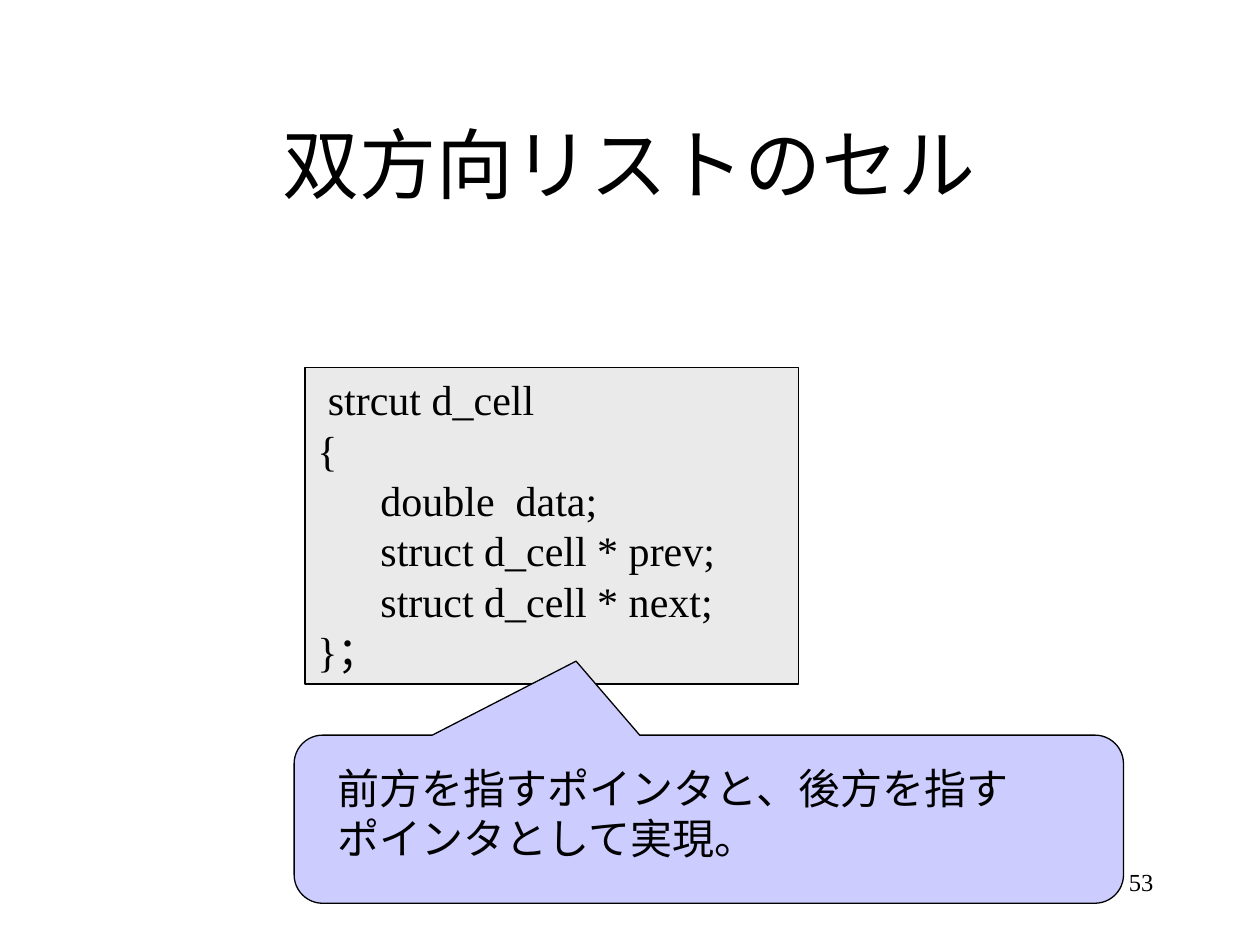
from pptx import Presentation
from pptx.dml.color import RGBColor
from pptx.enum.shapes import MSO_SHAPE
from pptx.enum.text import MSO_ANCHOR, PP_ALIGN
from pptx.util import Cm, Pt

COLORS = {"ink": "000000", "code": "EAEAEA", "callout": "CCCCFF"}
FONT = "Times New Roman"


def write(shape, lines, size, align=PP_ALIGN.LEFT, anchor=MSO_ANCHOR.TOP, wrap=True):
    frame = shape.text_frame
    frame.word_wrap = wrap
    frame.vertical_anchor = anchor
    for i, line in enumerate(lines):
        paragraph = frame.add_paragraph() if i else frame.paragraphs[0]
        paragraph.alignment = align
        run = paragraph.add_run()
        run.text = line
        run.font.size = Pt(size)
        run.font.name = FONT
        run.font.color.rgb = RGBColor.from_string(COLORS["ink"])


def add_panel(kind, left, top, width, height, fill):
    panel = slide.shapes.add_shape(kind, Cm(left), Cm(top), Cm(width), Cm(height))
    panel.shadow.inherit = False
    panel.fill.solid()
    panel.fill.fore_color.rgb = RGBColor.from_string(COLORS[fill])
    panel.line.color.rgb = RGBColor.from_string(COLORS["ink"])
    panel.line.width = Pt(0.75)
    return panel


prs = Presentation()
prs.slide_width, prs.slide_height = Cm(25.4), Cm(19.05)
slide = prs.slides.add_slide(prs.slide_layouts[6])

# Page number
page_number = slide.shapes.add_textbox(Cm(18.21), Cm(17.36), Cm(5.29), Cm(1.27))
write(page_number, ["53"], 14, align=PP_ALIGN.RIGHT)

# Title
title = slide.shapes.add_textbox(Cm(1.9), Cm(1.69), Cm(21.59), Cm(3.18))
write(title, ["双方向リストのセル"], 44, align=PP_ALIGN.CENTER, anchor=MSO_ANCHOR.MIDDLE)

# Struct definition
code = add_panel(MSO_SHAPE.RECTANGLE, 6.15, 7.41, 9.95, 6.38, "code")
code_lines = [
    " strcut d_cell",
    "{",
    "\tdouble  data;",
    "\tstruct d_cell * prev;",
    "\tstruct d_cell * next;",
    "}；",
]
write(code, code_lines, 24, wrap=False)

# Callout pointing at the two pointers
callout = add_panel(MSO_SHAPE.ROUNDED_RECTANGULAR_CALLOUT, 5.93, 14.82, 16.72, 3.39, "callout")
for i, value in enumerate((-0.16, -0.94, 0.17)):
    callout.adjustments[i] = value

# Explanation inside the callout
explanation = slide.shapes.add_textbox(Cm(6.56), Cm(15.24), Cm(14.82), Cm(2.29))
write(explanation, ["前方を指すポインタと、後方を指すポインタとして実現。"], 24)

prs.save("out.pptx")
